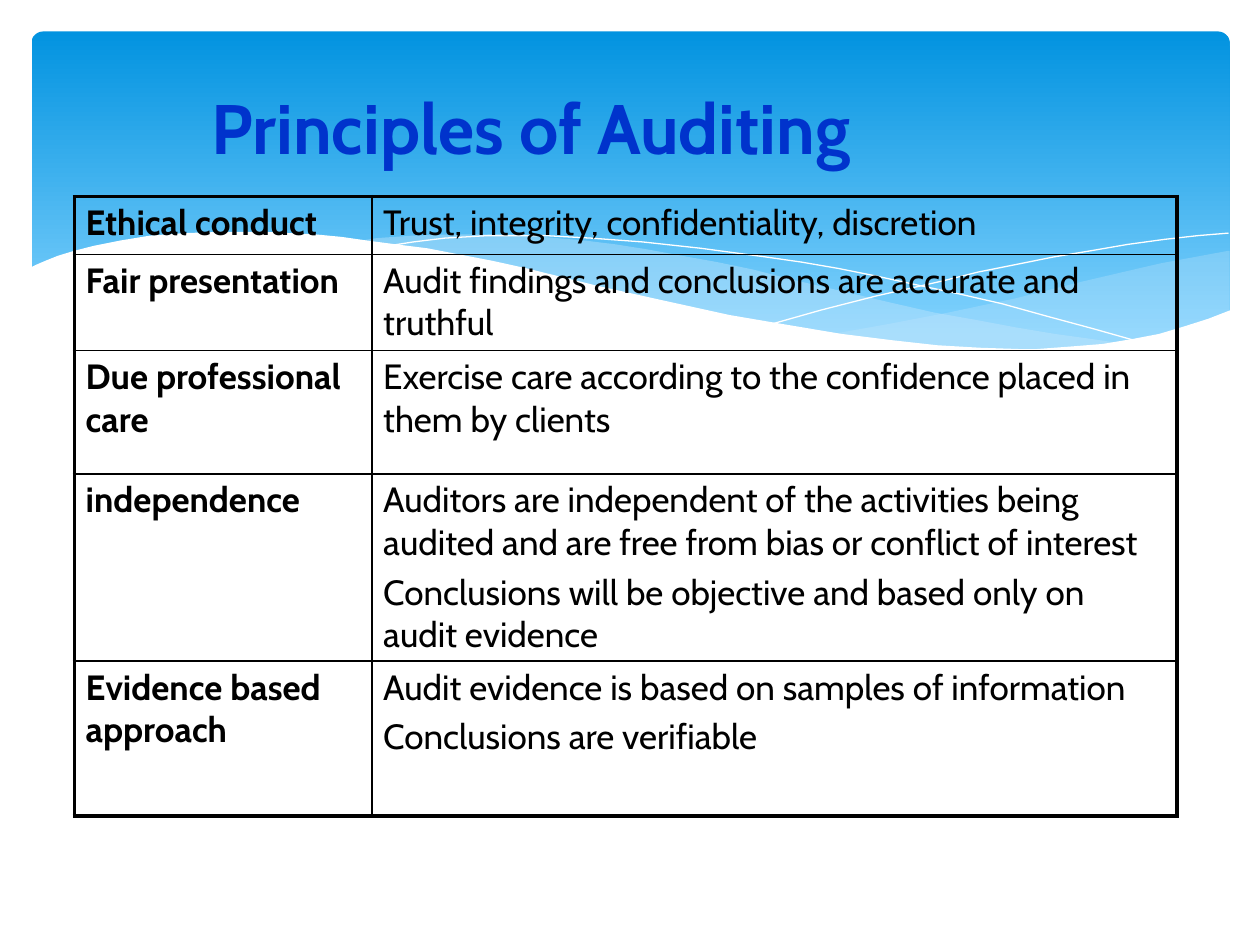
from lxml.etree import SubElement
from pptx import Presentation
from pptx.dml.color import RGBColor
from pptx.enum.shapes import MSO_SHAPE
from pptx.enum.text import MSO_ANCHOR
from pptx.oxml.ns import qn
from pptx.util import Pt

BLACK = RGBColor(0x00, 0x00, 0x00)
WHITE = RGBColor(0xFF, 0xFF, 0xFF)
TITLE_BLUE = RGBColor(0x00, 0x33, 0xCC)
SKY_TOP = RGBColor(0x02, 0x93, 0xE0)
SKY_BOTTOM = RGBColor(0x83, 0xD3, 0xFE)
PALE_BLUE = RGBColor(0xC6, 0xE7, 0xFC)
FONT = "Cabin"
THICK, THIN = 2.25, 1

# Wave outlines, in hundredths of an inch
RIGHT_WAVE = [
    (975, 199), (948, 204), (921, 209), (891, 216), (861, 223), (805, 237), (753, 248),
    (706, 257), (661, 265), (691, 269), (718, 272), (745, 275), (769, 277), (792, 277),
    (814, 278), (835, 277), (854, 276), (872, 274), (889, 272), (905, 269), (921, 265),
    (935, 261), (949, 257), (963, 252), (976, 247), (976, 199)]
MIDDLE_WAVE = [
    (893, 273), (866, 269), (837, 265), (807, 260), (775, 254), (741, 248), (706, 240),
    (668, 231), (629, 222), (598, 214), (569, 208), (541, 203), (514, 198), (489, 194),
    (465, 191), (442, 189), (420, 187), (399, 186), (361, 186), (328, 187), (299, 189),
    (286, 191), (323, 196), (362, 203), (404, 211), (449, 222), (491, 232), (530, 240),
    (566, 248), (601, 255), (634, 261), (665, 266), (695, 270), (722, 274), (748, 276),
    (773, 277), (796, 278), (828, 278), (857, 277), (876, 275)]
FALLING_LINE = [
    (309, 195), (328, 192), (353, 189), (387, 187), (433, 187), (469, 189), (510, 192),
    (556, 197), (608, 204), (636, 208), (665, 213), (695, 219), (727, 226), (760, 233),
    (795, 241), (831, 251), (868, 261), (907, 272)]
RISING_LINE = [
    (613, 257), (652, 246), (695, 235), (748, 223), (776, 216), (806, 210), (836, 204),
    (866, 199), (895, 194), (924, 190), (951, 187), (975, 185)]
WHITE_WAVE = [
    (977, 246), (959, 253), (940, 259), (920, 265), (899, 269), (875, 273), (850, 275),
    (823, 277), (809, 277), (778, 276), (744, 274), (708, 270), (668, 265), (626, 258),
    (579, 250), (529, 239), (475, 227), (418, 213), (391, 207), (365, 202), (339, 197),
    (315, 194), (292, 191), (271, 188), (250, 186), (230, 185), (211, 184), (177, 184),
    (146, 185), (119, 187), (95, 191), (75, 195), (59, 199), (46, 203), (36, 207),
    (29, 210), (23, 213), (23, 329), (977, 329)]

PRINCIPLES = [
    (33, "Ethical conduct", ["Trust, integrity, confidentiality, discretion"]),
    (55, "Fair presentation", ["Audit findings and conclusions are accurate and truthful"]),
    (70.5, "Due professional care",
     ["Exercise care according to the confidence placed in them by clients"]),
    (107, "independence",
     ["Auditors are independent of the activities being audited and are free from bias "
      "or conflict of interest",
      "Conclusions will be objective and based only on audit evidence"]),
    (88.5, "Evidence based approach",
     ["Audit evidence is based on samples of information", "Conclusions are verifiable"]),
]


def add_wave(points, closed):
    outline = slide.shapes.build_freeform(*points[0], scale=Pt(0.72))
    outline.add_line_segments(points[1:], close=closed)
    wave = outline.convert_to_shape()
    wave.shadow.inherit = False
    return wave


def add_border(cell, side, width):
    """Draw one cell edge; side is L, R, T or B, added in that order."""
    edge = SubElement(cell._tc.get_or_add_tcPr(), qn(f"a:ln{side}"), w=str(Pt(width)))
    color = SubElement(SubElement(edge, qn("a:solidFill")), qn("a:srgbClr"))
    color.set("val", str(BLACK))


prs = Presentation()
prs.slide_width, prs.slide_height = Pt(720), Pt(540)
slide = prs.slides.add_slide(prs.slide_layouts[6])

# Sky panel with waves
sky = slide.shapes.add_shape(
    MSO_SHAPE.ROUNDED_RECTANGLE, Pt(18), Pt(18), Pt(684.7), Pt(194.4))
sky.adjustments[0] = 0.034
sky.shadow.inherit = False
sky.line.fill.background()
sky.fill.gradient()
sky.fill.gradient_angle = 270
for stop, color, position in zip(
        sky.fill.gradient_stops, (SKY_TOP, SKY_BOTTOM), (0, 0.9)):
    stop.color.rgb = color
    stop.position = position

for points, opacity in ((RIGHT_WAVE, 29), (MIDDLE_WAVE, 40)):
    wave = add_wave(points, True)
    wave.line.fill.background()
    wave.fill.solid()
    wave.fill.fore_color.rgb = PALE_BLUE
    tint = wave._element.spPr.find(qn("a:solidFill")).find(qn("a:srgbClr"))
    SubElement(tint, qn("a:alpha"), val=str(opacity * 1000))

for points in (FALLING_LINE, RISING_LINE):
    wave = add_wave(points, False)
    wave.fill.background()
    wave.line.color.rgb = WHITE
    wave.line.width = Pt(0)

white_wave = add_wave(WHITE_WAVE, True)
white_wave.line.fill.background()
white_wave.fill.solid()
white_wave.fill.fore_color.rgb = WHITE

# Title
title = slide.shapes.add_textbox(Pt(113.8), Pt(30.2), Pt(498.2), Pt(84.2)).text_frame
title.word_wrap = True
title.vertical_anchor = MSO_ANCHOR.MIDDLE
heading = title.paragraphs[0]
heading.text = "Principles of Auditing"
heading.font.name = FONT
heading.font.size = Pt(40)
heading.font.bold = True
heading.font.color.rgb = TITLE_BLUE

# Table of principles
total_height = sum(height for height, _, _ in PRINCIPLES)
table = slide.shapes.add_table(
    len(PRINCIPLES), 2, Pt(42.5), Pt(112.3), Pt(630), Pt(total_height)).table
table.first_row = False
table.horz_banding = False
table.columns[0].width, table.columns[1].width = Pt(170), Pt(460)

last_row = len(PRINCIPLES) - 1
for row, (height, principle, meanings) in enumerate(PRINCIPLES):
    table.rows[row].height = Pt(height)
    for column, lines in enumerate(([principle], meanings)):
        cell = table.cell(row, column)
        cell.margin_left = cell.margin_right = Pt(6.5)
        cell.margin_top = cell.margin_bottom = Pt(3)
        add_border(cell, "L", THICK if column == 0 else THIN)
        add_border(cell, "R", THICK if column == 1 else THIN)
        add_border(cell, "T", THICK if row == 0 else THIN)
        add_border(cell, "B", THICK if row == last_row else THIN)
        cell.fill.background()
        cell.text = "\n".join(lines)
        for number, paragraph in enumerate(cell.text_frame.paragraphs):
            if number:
                paragraph.space_before = Pt(4)
            paragraph.font.name = FONT
            paragraph.font.size = Pt(20)
            paragraph.font.bold = column == 0
            paragraph.font.color.rgb = BLACK

prs.save("out.pptx")
